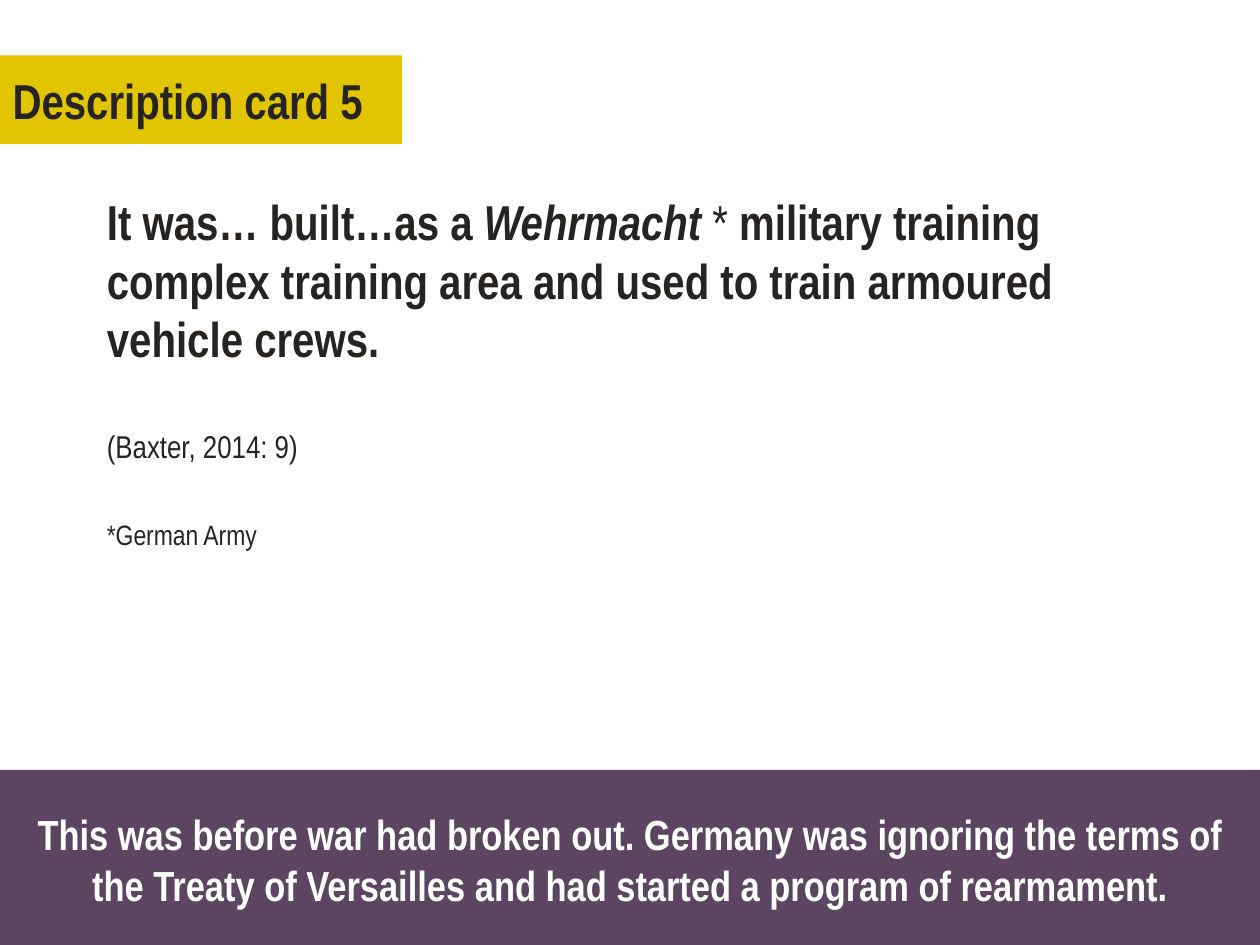
from pptx import Presentation
from pptx.dml.color import RGBColor
from pptx.enum.shapes import MSO_SHAPE
from pptx.enum.text import MSO_ANCHOR, MSO_AUTO_SIZE, PP_ALIGN
from pptx.util import Pt

COLORS = {"ink": "262321", "title": "E1C500", "banner": "5C4560", "white": "FFFFFF"}
FONT = "Arial Narrow"


def add_run(p, text, size=28, color="ink", bold=False, italic=False):
    r = p.add_run()
    r.text = text
    f = r.font
    f.name, f.size, f.bold, f.italic = FONT, Pt(size), bold, italic
    f.color.rgb = RGBColor.from_string(COLORS[color])


class Card:
    """Style and current slide of a description card."""

    def __init__(self, prs):
        self.s = prs.slides.add_slide(prs.slide_layouts[5])

    def fill(self, sp, color):
        sp.fill.solid()
        sp.fill.fore_color.rgb = RGBColor.from_string(COLORS[color])

    def title(self, text, x, y, w, h):
        sp = self.s.shapes.title
        sp.left, sp.top, sp.width, sp.height = Pt(x), Pt(y), Pt(w), Pt(h)
        self.fill(sp, "title")
        tf = sp.text_frame
        tf.auto_size = MSO_AUTO_SIZE.NONE
        tf.vertical_anchor = MSO_ANCHOR.MIDDLE
        p = tf.paragraphs[0]
        p.alignment = PP_ALIGN.LEFT
        add_run(p, text, bold=True)

    def text(self, x, y, w, h, wrap=True):
        sp = self.s.shapes.add_textbox(Pt(x), Pt(y), Pt(w), Pt(h))
        tf = sp.text_frame
        tf.word_wrap = wrap
        tf.auto_size = MSO_AUTO_SIZE.SHAPE_TO_FIT_TEXT
        return tf

    def banner(self, text, x, y, w, h):
        sp = self.s.shapes.add_shape(MSO_SHAPE.RECTANGLE, Pt(x), Pt(y), Pt(w), Pt(h))
        sp.shadow.inherit = False
        self.fill(sp, "banner")
        sp.line.fill.background()
        tf = sp.text_frame
        tf.word_wrap = True
        tf.vertical_anchor = MSO_ANCHOR.MIDDLE
        p = tf.paragraphs[0]
        p.alignment = PP_ALIGN.CENTER
        add_run(p, text, size=24, color="white", bold=True)


def main():
    prs = Presentation()
    prs.slide_width, prs.slide_height = Pt(720), Pt(540)
    card = Card(prs)

    card.title("Description card 5", 0, 31.7, 229.7, 50.6)

    tf = card.text(54, 105.8, 617.8, 177)
    quote = tf.paragraphs[0]
    add_run(quote, "It was… built…as a ", bold=True)
    add_run(quote, "Wehrmacht", bold=True, italic=True)
    add_run(quote, " * ")
    add_run(quote, "military training complex training area and used to train "
                   "armoured vehicle crews.", bold=True)
    source = tf.add_paragraph()
    source.space_before = Pt(34)
    add_run(source, "(Baxter, 2014: 9)", size=18)

    note = card.text(54, 292.3, 105, 26.6, wrap=False)
    add_run(note.paragraphs[0], "*German Army", size=16)

    card.banner("This was before war had broken out. Germany was ignoring the terms of "
                "the Treaty of Versailles and had started a program of rearmament.",
                0, 440, 720, 102)

    prs.save("out.pptx")


if __name__ == "__main__":
    main()
